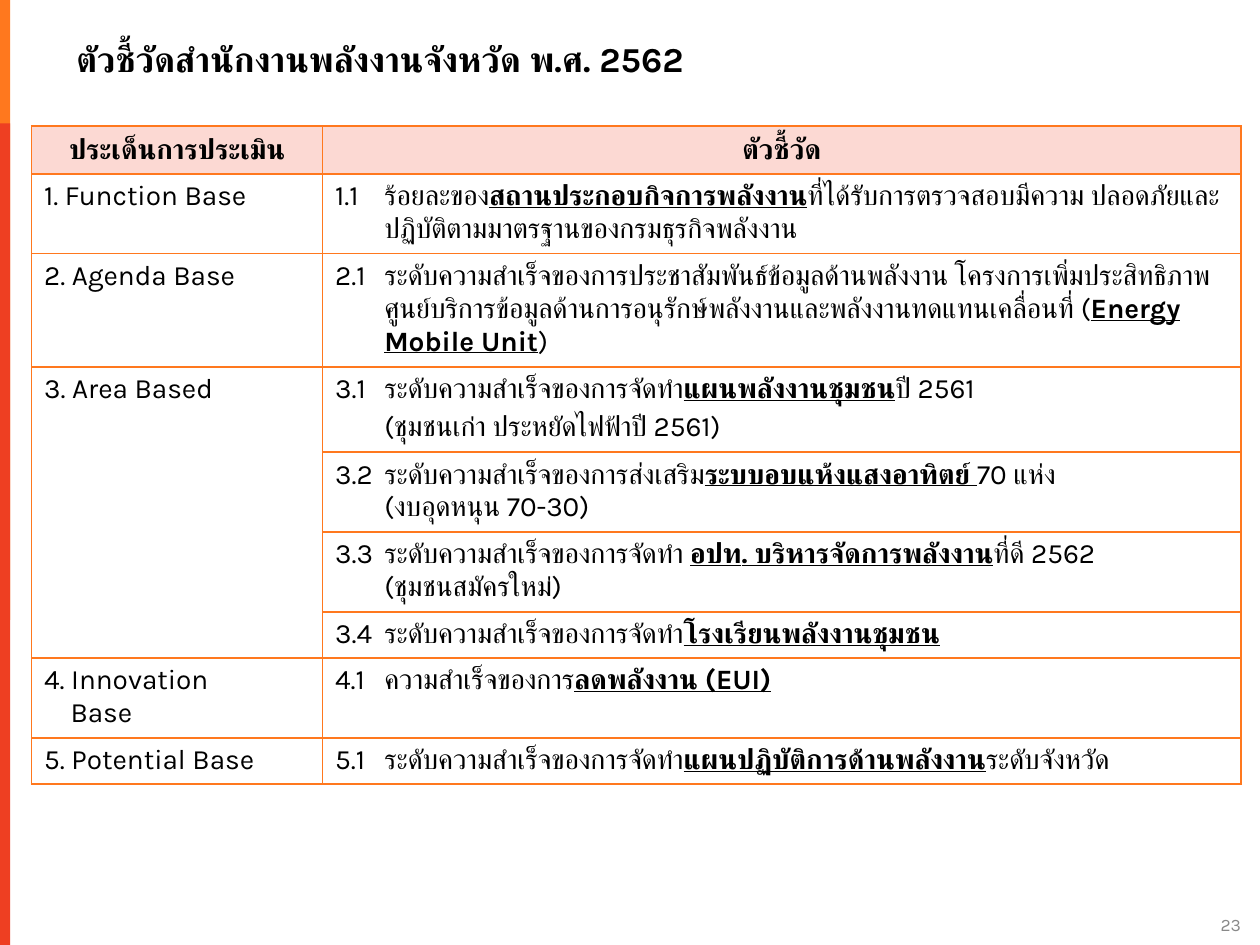
from lxml import etree
from pptx import Presentation
from pptx.dml.color import RGBColor
from pptx.enum.shapes import MSO_SHAPE as Shape
from pptx.enum.text import MSO_ANCHOR as Anchor, PP_ALIGN as Align
from pptx.oxml import parse_xml
from pptx.oxml.ns import nsdecls, qn
from pptx.util import Inches, Pt

FONT = "Karla"
ORANGE, RED, PINK = "FF781E", "EE3F22", "FCD9D3"
BLACK, GREY = "000000", "898989"
TITLE = "ตัวชี้วัดสำนักงานพลังงานจังหวัด พ.ศ. 2562"
HEADINGS = ("ประเด็นการประเมิน", "ตัวชี้วัด")
COLUMN_WIDTHS = (2.31, 7.29)
HEADER_HEIGHT = 0.38
INDICATOR_INDENT, ISSUE_INDENT = 0.39, 0.21
INSETS = {"margin_left": Inches(0.1), "margin_right": Inches(0.1),
          "margin_top": Inches(0.05), "margin_bottom": Inches(0.05)}
NO_INSETS = {side: 0 for side in INSETS}
# Each row: height, issue, indicator (*emphasis*), points before a second line.
ROWS = (
    (0.58, "1. Function Base",
     "1.1\tร้อยละของ*สถานประกอบกิจการพลังงาน*ที่ได้รับการตรวจสอบมีความ "
     "ปลอดภัยและปฏิบัติตามมาตรฐานของกรมธุรกิจพลังงาน", 0),
    (0.88, "2. Agenda Base",
     "2.1\tระดับความสำเร็จของการประชาสัมพันธ์ข้อมูลด้านพลังงาน "
     "โครงการเพิ่มประสิทธิภาพศูนย์บริการข้อมูลด้านการอนุรักษ์พลังงานและ"
     "พลังงานทดแทนเคลื่อนที่ (*Energy Mobile Unit*)", 0),
    (0.66, "3. Area Based",
     "3.1\tระดับความสำเร็จของการจัดทำ*แผนพลังงานชุมชน*ปี 2561\n"
     "(ชุมชนเก่า ประหยัดไฟฟ้าปี 2561)", 3),
    (0.62, "",
     "3.2\tระดับความสำเร็จของการส่งเสริม*ระบบอบแห้งแสงอาทิตย์ *70 แห่ง\n"
     "(งบอุดหนุน 70-30)", 0),
    (0.62, "",
     "3.3\tระดับความสำเร็จของการจัดทำ *อปท. บริหารจัดการพลังงาน*ที่ดี 2562\n"
     "(ชุมชนสมัครใหม่)", 0),
    (0.36, "", "3.4\tระดับความสำเร็จของการจัดทำ*โรงเรียนพลังงานชุมชน*", 0),
    (0.62, "4. Innovation\nBase", "4.1\tความสำเร็จของการ*ลดพลังงาน (EUI)*", 0),
    (0.36, "5. Potential Base",
     "5.1\tระดับความสำเร็จของการจัดทำ*แผนปฏิบัติการด้านพลังงาน*ระดับจังหวัด", 0),
)
AREA_FIRST, AREA_LAST = 3, 6


def rgb(hex_colour):
    """Turn a hex string into a colour."""
    return RGBColor.from_string(hex_colour)


def apply(target, values):
    """Set every attribute in a dict of format values."""
    for name, value in values.items():
        setattr(target, name, value)


def add_run(paragraph, text, colour=BLACK, **formats):
    """Add one run in the slide's font, for Latin and Thai alike."""
    run = paragraph.add_run()
    run.text = text
    apply(run.font, {"name": FONT, **formats})
    run.font.color.rgb = rgb(colour)
    thai_font = etree.SubElement(run.font._element, qn("a:cs"))
    thai_font.set("typeface", FONT)


def add_side_bars(slide, left, top, width, height):
    """Place the orange bar and the red bar that overlaps it."""
    red_top = 0.98
    for colour, bar_top, bar_height in ((ORANGE, top, 4.92),
                                        (RED, red_top, height - red_top)):
        bar = slide.shapes.add_shape(Shape.RECTANGLE, Inches(left), Inches(bar_top),
                                     Inches(width), Inches(bar_height))
        bar.shadow.inherit = False
        bar.fill.solid()
        bar.fill.fore_color.rgb = rgb(colour)
        bar.line.fill.background()


def add_label(slide, box, text, align, frame_formats, **formats):
    """Place one unwrapped line of text in a box."""
    frame = slide.shapes.add_textbox(*map(Inches, box)).text_frame
    apply(frame, {"word_wrap": False, **frame_formats})
    paragraph = frame.paragraphs[0]
    paragraph.alignment = align
    add_run(paragraph, text, **formats)


def style_cell(cell, fill=None):
    """Give a cell its borders, insets and fill."""
    properties = cell._tc.get_or_add_tcPr()
    for side in ("lnL", "lnR", "lnT", "lnB"):
        properties.append(parse_xml(
            f'<a:{side} {nsdecls("a")} w="{Pt(1)}"><a:solidFill>'
            f'<a:srgbClr val="{ORANGE}"/></a:solidFill></a:{side}>'))
    apply(cell, INSETS)
    if fill:
        cell.fill.solid()
        cell.fill.fore_color.rgb = rgb(fill)
    else:
        cell.fill.background()


def write_cell(cell, text, indent, gap=0):
    """Write lines with a hanging indent, and underline the emphasis."""
    for index, line in enumerate(text.split("\n")):
        paragraph = cell.text_frame.paragraphs[0] if index == 0 else cell.text_frame.add_paragraph()
        properties = paragraph._p.get_or_add_pPr()
        properties.set("marL", str(Inches(indent)))
        properties.set("indent", str(0 if index else -Inches(indent)))
        if index:
            paragraph.space_before = Pt(gap)
        for part, words in enumerate(line.split("*")):
            if words:
                emphasis = part % 2 == 1
                add_run(paragraph, words, size=Pt(16), bold=emphasis, underline=emphasis)


def add_indicator_table(slide, left, top, width):
    """Place the table of issues and their indicators."""
    heights = [HEADER_HEIGHT] + [row[0] for row in ROWS]
    table = slide.shapes.add_table(len(heights), len(COLUMN_WIDTHS), Inches(left), Inches(top),
                                   Inches(width), Inches(sum(heights))).table
    apply(table, {"first_row": False, "horz_banding": False})
    for column, column_width in zip(table.columns, COLUMN_WIDTHS):
        column.width = Inches(column_width)
    for row, height in zip(table.rows, heights):
        row.height = Inches(height)
    for column, heading in enumerate(HEADINGS):
        cell = table.cell(0, column)
        style_cell(cell, PINK)
        cell.vertical_anchor = Anchor.MIDDLE
        paragraph = cell.text_frame.paragraphs[0]
        paragraph.alignment = Align.CENTER
        add_run(paragraph, heading, size=Pt(16), bold=True)
    for number, (_, issue, indicator, gap) in enumerate(ROWS, 1):
        issue_cell, indicator_cell = table.cell(number, 0), table.cell(number, 1)
        style_cell(issue_cell)
        style_cell(indicator_cell)
        write_cell(issue_cell, issue, ISSUE_INDENT)
        write_cell(indicator_cell, indicator, INDICATOR_INDENT, gap)
    table.cell(AREA_FIRST, 0).merge(table.cell(AREA_LAST, 0))


def main():
    """Build the slide and save it."""
    deck = Presentation()
    apply(deck, {"slide_width": Inches(10), "slide_height": Inches(7.5)})
    slide = deck.slides.add_slide(deck.slide_layouts[6])
    add_side_bars(slide, 0, 0, 0.08, 7.5)
    add_label(slide, (9.68, 7.27, 0.17, 0.15), "23", Align.RIGHT,
              {**NO_INSETS, "vertical_anchor": Anchor.BOTTOM}, size=Pt(10), colour=GREY)
    add_indicator_table(slide, 0.25, 1, sum(COLUMN_WIDTHS))
    add_label(slide, (0.17, 0.25, 5.69, 0.44), TITLE, Align.CENTER, INSETS,
              size=Pt(20), bold=True)
    deck.save("out.pptx")


if __name__ == "__main__":
    main()
